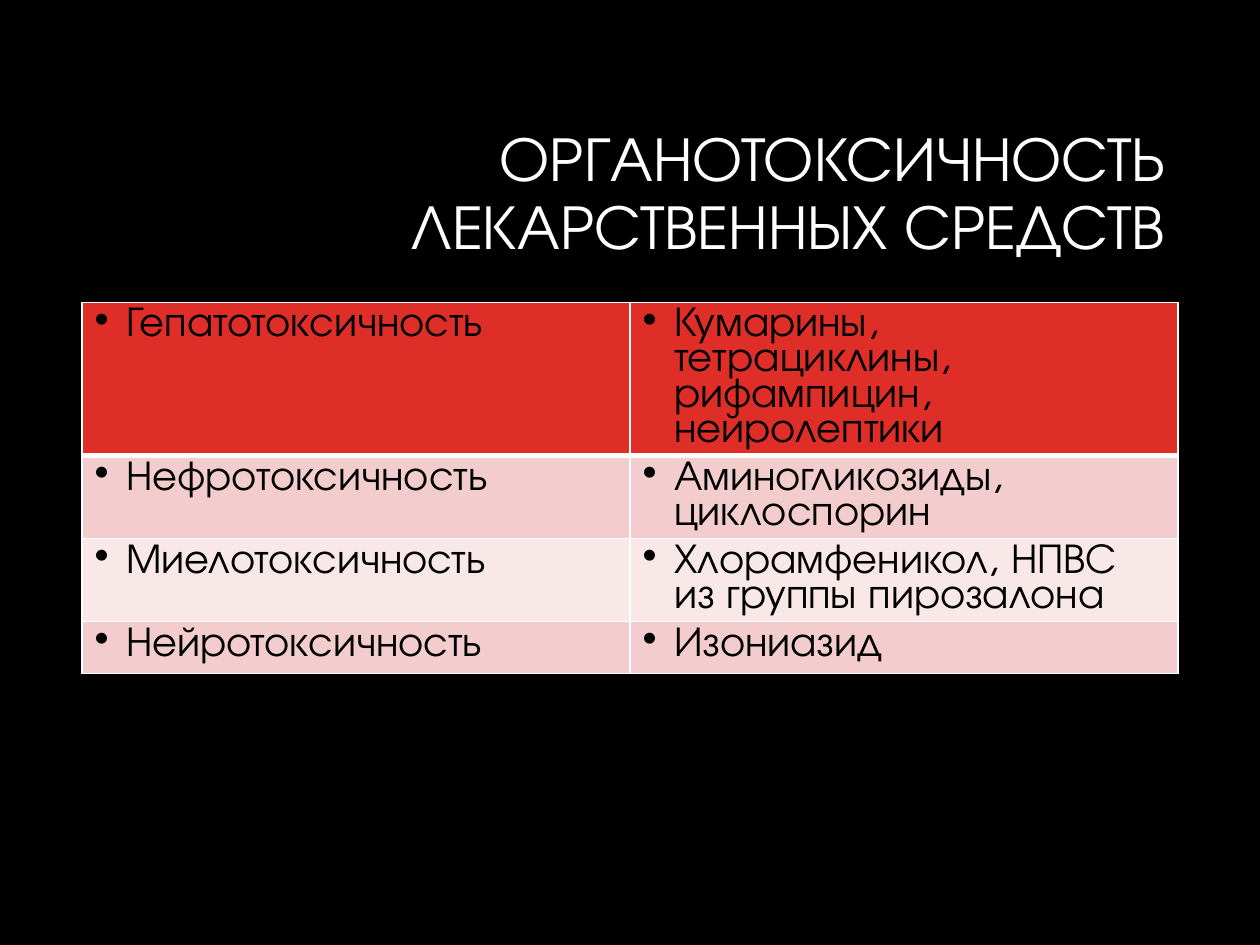
from pptx import Presentation
from pptx.dml.color import RGBColor
from pptx.enum.text import MSO_ANCHOR, PP_ALIGN
from pptx.oxml.ns import qn
from pptx.util import Inches, Pt
from lxml.etree import SubElement as Sub

BLACK = RGBColor(0x00, 0x00, 0x00)
WHITE = RGBColor(0xFF, 0xFF, 0xFF)
RED = RGBColor(0xDF, 0x2E, 0x28)
ROSE = RGBColor(0xF3, 0xCD, 0xCD)
PALE = RGBColor(0xF9, 0xE8, 0xE8)
FONT = "TeX Gyre Adventor"
TITLE = "ОРГАНОТОКСИЧНОСТЬ ЛЕКАРСТВЕННЫХ СРЕДСТВ"
ROWS = [
    ("Гепатотоксичность", "Кумарины, тетрациклины, рифампицин, нейролептики"),
    ("Нефротоксичность", "Аминогликозиды, циклоспорин"),
    ("Миелотоксичность", "Хлорамфеникол, НПВС из группы пирозалона"),
    ("Нейротоксичность", "Изониазид"),
]
FILLS = [RED, ROSE, PALE, ROSE]
COL, ROW = Inches(4.35), Inches(0.41)


def style(para, size, color):
    para.line_spacing = 0.9
    para.font.name = FONT
    para.font.size = Pt(size)
    para.font.color.rgb = color


def add_title(slide):
    title = slide.shapes.title
    title.left, title.top = Inches(2.38), Inches(0.84)
    title.width, title.height = Inches(6.97), Inches(1.41)
    frame = title.text_frame
    frame.text = TITLE
    frame.word_wrap = True
    frame.vertical_anchor = MSO_ANCHOR.MIDDLE
    para = frame.paragraphs[0]
    para.alignment = PP_ALIGN.RIGHT
    style(para, 36, WHITE)


def add_edges(cell, top, bottom):
    props = cell._tc.get_or_add_tcPr()
    for side, width in (("L", 1), ("R", 1), ("T", top), ("B", bottom)):
        line = Sub(props, qn(f"a:ln{side}"), w=str(Pt(width)))
        fill = Sub(line, qn("a:solidFill"))
        Sub(fill, qn("a:srgbClr"), val=str(WHITE))


def add_bullet(para):
    props = para._p.get_or_add_pPr()
    props.set("marL", str(Inches(0.25)))
    props.set("indent", str(-Inches(0.25)))
    Sub(props, qn("a:buChar"), char="•")


def fill_cell(cell, text, color, top, bottom):
    add_edges(cell, top, bottom)
    cell.fill.solid()
    cell.fill.fore_color.rgb = color
    cell.text = text
    para = cell.text_frame.paragraphs[0]
    add_bullet(para)
    style(para, 24, BLACK)
    para.font.bold = False


def add_grid(slide):
    count = len(ROWS)
    table = slide.shapes.add_table(
        count, 2, Inches(0.65), Inches(2.4), 2 * COL, count * ROW
    ).table
    for r, (texts, color) in enumerate(zip(ROWS, FILLS)):
        top = 3 if r == 1 else 1
        bottom = 3 if r == 0 else 1
        for c, text in enumerate(texts):
            fill_cell(table.cell(r, c), text, color, top, bottom)


def main():
    deck = Presentation()
    deck.slide_width, deck.slide_height = Inches(10), Inches(7.5)
    slide = deck.slides.add_slide(deck.slide_layouts[5])
    back = slide.background.fill
    back.solid()
    back.fore_color.rgb = BLACK
    add_title(slide)
    add_grid(slide)
    deck.save("out.pptx")


if __name__ == "__main__":
    main()
